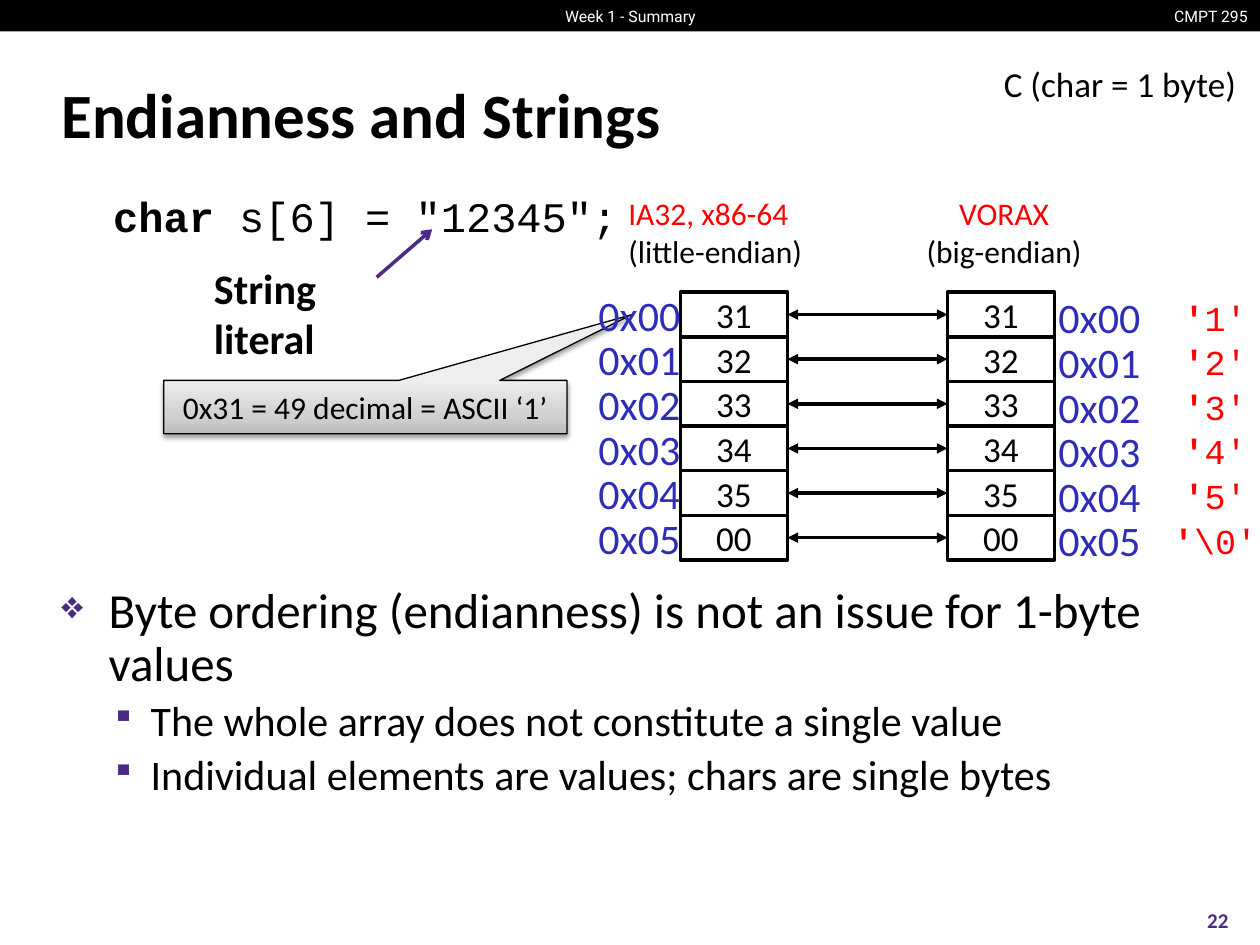
"""Build a slide on endianness and strings with two byte-order columns."""
from lxml.etree import SubElement
from pptx import Presentation
from pptx.dml.color import RGBColor
from pptx.enum.shapes import MSO_CONNECTOR as Link, MSO_SHAPE as Preset
from pptx.enum.text import MSO_ANCHOR as Anchor, PP_ALIGN as Align
from pptx.oxml.ns import qn
from pptx.util import Pt

BLACK, WHITE, RED, BLUE, PURPLE = "000000", "FFFFFF", "FF0000", "2D2DB9", "4B2A85"
BYTES = ["31", "32", "33", "34", "35", "00"]
CHARACTERS = ["1", "2", "3", "4", "5", "\\0"]
POINTS = [
    ("Byte ordering (endianness) is not an issue for 1-byte values", 0),
    ("The whole array does not constitute a single value", 1),
    ("Individual elements are values; chars are single bytes", 1),
]
LEVELS = [
    dict(size=28, bullet="❖", bullet_size=78, margin=27, hanging=27),
    dict(size=24, bullet="▪", bullet_size=78, margin=51, hanging=22.5, before=4.8),
]
HEADINGS = [
    (352, 147, Align.LEFT, "IA32, x86-64", "(little-endian)"),
    (507.6, 132.5, Align.CENTER, "VORAX", "(big-endian)"),
]
GRADIENT = [(0, "BDBDBD"), (35, "D1D1D1"), (100, "EEEEEE")]
GRID_TOP, ROW = 167, 25.5
LITTLE_LEFT, BIG_LEFT, CELL_WIDTH = 388.8, 541.4, 61.2
LITTLE_ADDRESS, BIG_ADDRESS, CHARACTER_LEFT = 334.8, 597.6, 663.8
LABEL_DROP = 1.4


def color(value):
    return RGBColor.from_string(value)


def write(shape, text, size=18, font="Calibri", ink=BLACK, bold=False, align=Align.LEFT,
          anchor=Anchor.TOP, wrap=True, inset=None, spacing=None, before=0,
          bullet=None, bullet_size=100, margin=0, hanging=0):
    """Add a paragraph; text is a string or a list of (text, ink, bold) spans."""
    frame = shape.text_frame
    frame.word_wrap, frame.vertical_anchor = wrap, anchor
    if inset is not None:
        frame.margin_left = frame.margin_right = Pt(inset)
        frame.margin_top = frame.margin_bottom = Pt(inset)
    para = frame.paragraphs[0]
    if para.runs:
        para = frame.add_paragraph()
    para.alignment, para.line_spacing, para.space_before = align, spacing, Pt(before)
    if bullet:
        properties = para._p.get_or_add_pPr()
        properties.set("marL", str(Pt(margin)))
        properties.set("indent", str(-Pt(hanging)))
        tint = SubElement(properties, qn("a:buClr"))
        SubElement(tint, qn("a:srgbClr"), val=PURPLE)
        SubElement(properties, qn("a:buSzPct"), val=str(bullet_size * 1000))
        SubElement(properties, qn("a:buChar"), char=bullet)
    spans = [(text, ink, bold)] if isinstance(text, str) else text
    for words, span_ink, span_bold in spans:
        span = para.add_run()
        span.text = words.rstrip("\n")
        span.font.size, span.font.name, span.font.bold = Pt(size), font, span_bold
        span.font.color.rgb = color(span_ink)
        if words.endswith("\n"):
            para.add_line_break()
    return shape


def add_box(page, left, top, width, height):
    return page.shapes.add_textbox(Pt(left), Pt(top), Pt(width), Pt(height))


def add_rectangle(page, left, top, width, height, fill, outline=None):
    shape = page.shapes.add_shape(Preset.RECTANGLE, Pt(left), Pt(top), Pt(width), Pt(height))
    shape.shadow.inherit = False
    shape.fill.solid()
    shape.fill.fore_color.rgb = color(fill)
    if outline:
        shape.line.color.rgb, shape.line.width = color(outline), Pt(2)
    else:
        shape.line.fill.background()
    return shape


def add_arrow(page, start, end, ink, head=None, tail=None):
    arrow = page.shapes.add_connector(Link.STRAIGHT, *map(Pt, start + end))
    arrow.line.color.rgb, arrow.line.width = color(ink), Pt(2)
    outline = arrow.line._get_or_add_ln()
    for tag, kind in (("a:headEnd", head), ("a:tailEnd", tail)):
        if kind:
            SubElement(outline, qn(tag), type=kind)
    SubElement(arrow._element.spPr, qn("a:effectLst"))
    return arrow


def add_callout(page):
    callout = page.shapes.add_shape(
        Preset.RECTANGULAR_CALLOUT, Pt(93.6), Pt(217.4), Pt(230.4), Pt(30.5))
    callout.adjustments[0], callout.adjustments[1] = 0.66, -1.73
    callout.fill.gradient()
    callout.fill.gradient_angle = 90
    stops = callout._element.spPr.find(qn("a:gradFill")).find(qn("a:gsLst"))
    for stop in list(stops):
        stops.remove(stop)
    for position, tint in GRADIENT:
        stop = SubElement(stops, qn("a:gs"), pos=str(position * 1000))
        SubElement(stop, qn("a:srgbClr"), val=tint)
    callout.line.color.rgb, callout.line.width = color(BLACK), Pt(0.75)
    effects = SubElement(callout._element.spPr, qn("a:effectLst"))
    shadow = SubElement(effects, qn("a:outerShdw"), blurRad=str(Pt(3.1)),
                        dist=str(Pt(1.6)), dir="5400000", rotWithShape="0")
    shade = SubElement(shadow, qn("a:srgbClr"), val=BLACK)
    SubElement(shade, qn("a:alpha"), val="38000")
    write(callout, "0x31 = 49 decimal = ASCII ‘1’", align=Align.CENTER, anchor=Anchor.MIDDLE)


def add_byte_row(page, index, value, character):
    top = GRID_TOP + index * ROW
    centered = dict(align=Align.CENTER, anchor=Anchor.MIDDLE, inset=0)
    little, big = [
        write(add_rectangle(page, left, top, CELL_WIDTH, ROW, WHITE, BLACK),
              value, size=20, **centered)
        for left in (LITTLE_LEFT, BIG_LEFT)]
    middle = top + ROW / 2
    arrow = add_arrow(page, (LITTLE_LEFT + CELL_WIDTH, middle), (BIG_LEFT, middle),
                      BLACK, "triangle", "triangle")
    arrow.begin_connect(little, 3)
    arrow.end_connect(big, 1)
    for left, drop in ((LITTLE_ADDRESS, 0), (BIG_ADDRESS, LABEL_DROP)):
        write(add_box(page, left, top + drop, CELL_WIDTH, ROW), f"0x{index:02d}",
              size=24, ink=BLUE, **centered)
    write(add_box(page, CHARACTER_LEFT, top + LABEL_DROP, CELL_WIDTH, ROW),
          [("'", RED, True), (character + "'", RED, False)],
          size=20, font="Courier New", **centered)


def main():
    deck = Presentation()
    deck.slide_width, deck.slide_height = Pt(720), Pt(540)
    page = deck.slides.add_slide(deck.slide_layouts[6])

    add_rectangle(page, 0, 0, 720, 18, BLACK)
    banner = dict(size=9, font="Roboto", ink=WHITE, anchor=Anchor.MIDDLE)
    write(add_box(page, 661.7, 0, 58.3, 18), "CMPT 295", align=Align.RIGHT, **banner)
    write(add_box(page, 309.5, 0, 101.5, 18), "Week 1 - Summary", align=Align.CENTER, **banner)

    write(add_box(page, 57.6, 107.3, 302.4, 33),
          [("char", BLACK, True), (' s[6] = "12345";', BLACK, False)],
          size=24, font="Courier New", wrap=False, spacing=0.95)
    write(add_box(page, 28, 34.6, 661.7, 59.8), "Endianness and Strings",
          size=36, bold=True, anchor=Anchor.MIDDLE)
    body = add_box(page, 28, 331.2, 658.8, 198)
    for text, level in POINTS:
        write(body, text, spacing=0.9, **LEVELS[level])
    write(add_box(page, 671.8, 511.2, 48.2, 28.8), "22", size=12, ink=PURPLE, bold=True,
          align=Align.CENTER, anchor=Anchor.MIDDLE)
    write(add_box(page, 566.6, 32.4, 148.3, 31.7), "C (char = 1 byte)", size=20, wrap=False)

    add_callout(page)
    for index, (value, character) in enumerate(zip(BYTES, CHARACTERS)):
        add_byte_row(page, index, value, character)
    for left, width, align, machine, order in HEADINGS:
        write(add_box(page, left, 107.3, width, 54),
              [(machine + "\n", RED, False), (order, BLACK, False)], align=align)

    write(add_box(page, 115.2, 146.2, 103.7, 28.8), "String literal", size=24, bold=True)
    add_arrow(page, (215.3, 158.4), (247, 131), PURPLE, tail="arrow")
    deck.save("out.pptx")


if __name__ == "__main__":
    main()
